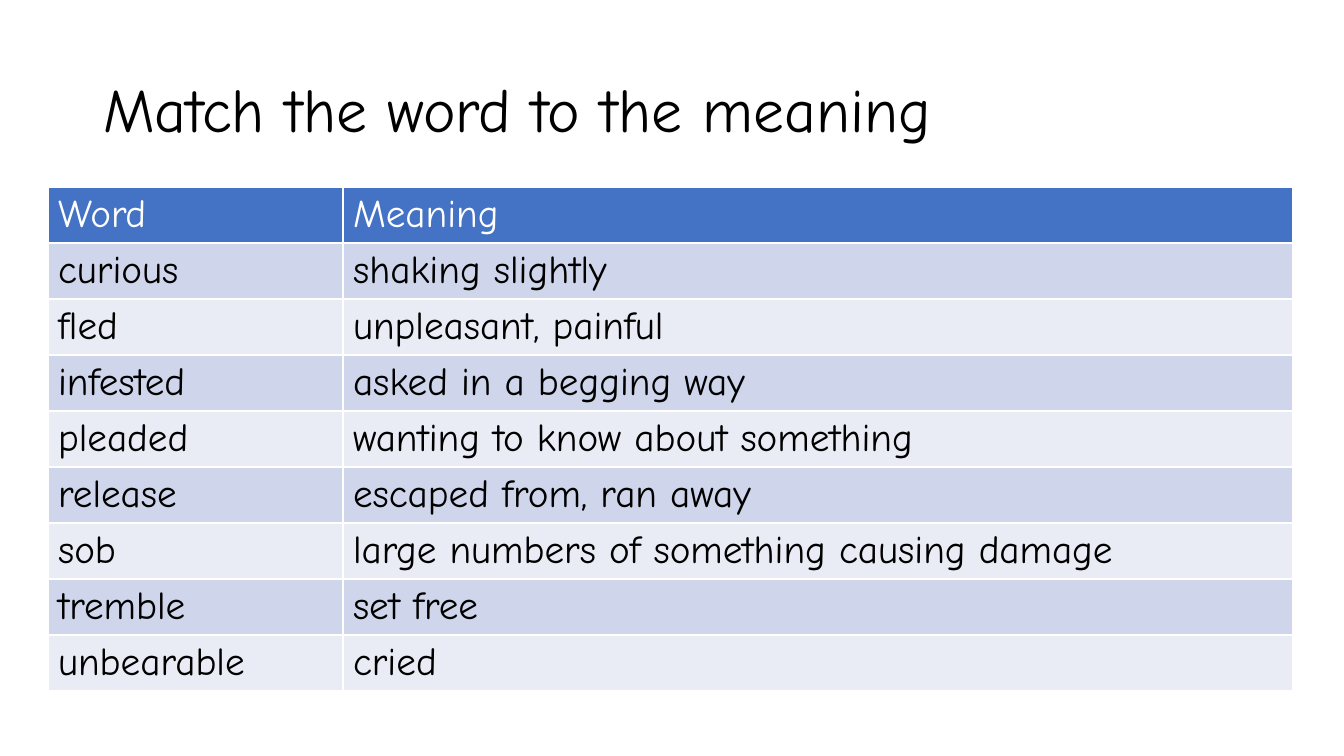
"""Build a vocabulary slide that matches words to meanings."""
import pptx
import pptx.dml.color
import pptx.enum.text
import pptx.util

INCH = 100.8
FONT = "Comic Neue"
HUES = {
    "head": "4472C4",
    "odd": "CFD5EA",
    "even": "E9EBF5",
    "white": "FFFFFF",
    "black": "000000",
}
WIDTHS = (295, 950)
ROW = 56
PAIRS = [
    ("Word", "Meaning"),
    ("curious", "shaking slightly"),
    ("fled", "unpleasant, painful"),
    ("infested", "asked in a begging way"),
    ("pleaded", "wanting to know about something"),
    ("release", "escaped from, ran away"),
    ("sob", "large numbers of something causing damage"),
    ("tremble", "set free"),
    ("unbearable", "cried"),
]


def px(count):
    return pptx.util.Inches(count / INCH)


def tint(name):
    return pptx.dml.color.RGBColor.from_string(HUES[name])


def write(frame, text, size, hue):
    frame.text = text
    para = frame.paragraphs[0]
    para.alignment = pptx.enum.text.PP_ALIGN.LEFT
    font = para.runs[0].font
    font.name = FONT
    font.size = pptx.util.Pt(size)
    font.bold = False
    font.color.rgb = tint(hue)


def add_title(slide, text):
    title = slide.shapes.title
    title.left, title.top = px(93), px(40)
    title.width, title.height = px(1159), px(146)
    frame = title.text_frame
    write(frame, text, 44, "black")
    frame.word_wrap = True
    frame.vertical_anchor = pptx.enum.text.MSO_ANCHOR.MIDDLE
    frame.paragraphs[0].line_spacing = 0.9


def add_grid(slide, pairs):
    frame = slide.shapes.add_table(
        len(pairs), len(WIDTHS), px(48), px(187),
        px(sum(WIDTHS)), px(ROW * len(pairs)))
    table = frame.table
    for column, width in zip(table.columns, WIDTHS):
        column.width = px(width)
    for index, pair in enumerate(pairs):
        table.rows[index].height = px(ROW)
        fill = "head" if index == 0 else ("even", "odd")[index % 2]
        hue = "white" if index == 0 else "black"
        for cell, text in zip(table.rows[index].cells, pair):
            cell.fill.solid()
            cell.fill.fore_color.rgb = tint(fill)
            write(cell.text_frame, text, 28, hue)


def main():
    deck = pptx.Presentation()
    deck.slide_width, deck.slide_height = px(1344), px(756)
    slide = deck.slides.add_slide(deck.slide_layouts[5])
    add_title(slide, "Match the word to the meaning")
    add_grid(slide, PAIRS)
    deck.save("out.pptx")


if __name__ == "__main__":
    main()
